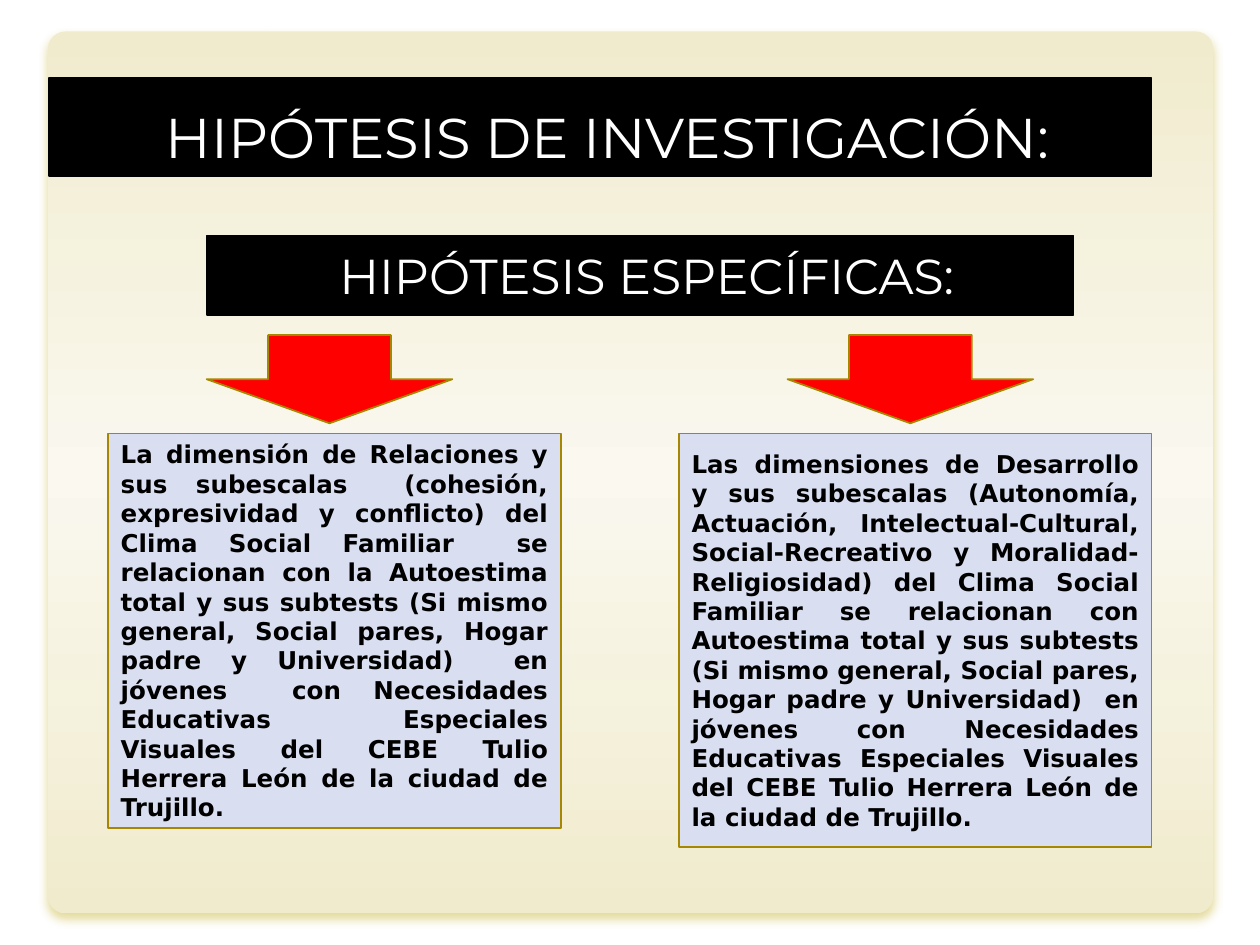
import pptx
import pptx.dml.color
import pptx.enum.shapes
import pptx.enum.text
import pptx.oxml
import pptx.util
from pptx.util import Inches

SHAPE = pptx.enum.shapes.MSO_SHAPE
ALIGN = pptx.enum.text.PP_ALIGN
ANCHOR = pptx.enum.text.MSO_ANCHOR
NAMESPACE = 'xmlns:a="http://schemas.openxmlformats.org/drawingml/2006/main"'

BLACK, WHITE, RED = "000000", "FFFFFF", "FF0000"
GOLD, PALE_BLUE = "A68701", "D9DFF0"
CREAM, LIGHT_CREAM, SHADOW = "F0EBCD", "FAF8EF", "C5AF25"

RELATIONS = (
    "La dimensión de Relaciones y sus subescalas  (cohesión, expresividad y "
    "conflicto) del Clima Social Familiar  se relacionan con la Autoestima total "
    "y sus subtests (Si mismo general, Social pares, Hogar padre y Universidad)  "
    "en jóvenes  con Necesidades Educativas Especiales Visuales del CEBE Tulio "
    "Herrera León de la ciudad de Trujillo."
)
DEVELOPMENT = (
    "Las dimensiones de Desarrollo y sus subescalas (Autonomía, Actuación, "
    "Intelectual-Cultural, Social-Recreativo y Moralidad-Religiosidad) del Clima "
    "Social Familiar se relacionan con Autoestima total y sus subtests (Si mismo "
    "general, Social pares, Hogar padre y Universidad)  en jóvenes con Necesidades "
    "Educativas Especiales Visuales del CEBE Tulio Herrera León de la ciudad de "
    "Trujillo."
)


def color(value):
    return pptx.dml.color.RGBColor.from_string(value)


def add_shape(slide, kind, box, fill, line):
    shape = slide.shapes.add_shape(kind, *map(Inches, box))
    shape.shadow.inherit = False
    shape.fill.solid()
    shape.fill.fore_color.rgb = color(fill)
    shape.line.color.rgb = color(line)
    shape.line.width = pptx.util.Pt(1)
    return shape


def add_panel(slide):
    """Rounded background with a vertical gradient and a soft shadow."""
    panel = slide.shapes.add_shape(
        SHAPE.ROUNDED_RECTANGLE, *map(Inches, (0.38, 0.25, 9.25, 7)))
    panel.adjustments[0] = 0.02
    panel.line.fill.background()
    panel.shadow.inherit = False

    stops = "".join(
        f'<a:gs pos="{percent * 1000}"><a:srgbClr val="{value}"/></a:gs>'
        for percent, value in ((0, CREAM), (50, LIGHT_CREAM), (100, CREAM)))
    gradient = pptx.oxml.parse_xml(
        f'<a:gradFill {NAMESPACE} rotWithShape="1"><a:gsLst>{stops}</a:gsLst>'
        '<a:lin ang="5400000" scaled="0"/></a:gradFill>')
    properties = panel.element.spPr
    properties.find(pptx.oxml.ns.qn("a:prstGeom")).addnext(gradient)

    shadow = pptx.oxml.parse_xml(
        f'<a:outerShdw {NAMESPACE} blurRad="63500" dist="45720" dir="5400000">'
        f'<a:srgbClr val="{SHADOW}"><a:alpha val="45000"/></a:srgbClr>'
        '</a:outerShdw>')
    properties.find(pptx.oxml.ns.qn("a:effectLst")).append(shadow)


def add_text(shape, text, size, font, text_color, alignment, anchor, bold=False):
    frame = shape.text_frame
    frame.word_wrap = True
    frame.vertical_anchor = anchor
    paragraph = frame.paragraphs[0]
    paragraph.text = text
    paragraph.alignment = alignment
    paragraph.font.size = pptx.util.Pt(size)
    paragraph.font.name = font
    paragraph.font.bold = bold
    paragraph.font.color.rgb = color(text_color)


def add_heading(slide, text, box, size, anchor):
    shape = add_shape(slide, SHAPE.RECTANGLE, box, BLACK, BLACK)
    add_text(shape, text, size, "Montserrat", WHITE, ALIGN.CENTER, anchor)


def add_hypothesis(slide, text, box, arrow_left):
    shape = add_shape(slide, SHAPE.RECTANGLE, box, PALE_BLUE, GOLD)
    add_text(shape, text, 14, "DejaVu Sans", BLACK, ALIGN.JUSTIFY,
             ANCHOR.MIDDLE, bold=True)
    add_shape(slide, SHAPE.DOWN_ARROW, (arrow_left, 2.66, 1.95, 0.7), RED, GOLD)


def main():
    presentation = pptx.Presentation()
    presentation.slide_width = Inches(10)
    presentation.slide_height = Inches(7.5)
    slide = presentation.slides.add_slide(presentation.slide_layouts[6])

    # Background
    add_panel(slide)

    # Headings
    add_heading(slide, " HIPÓTESIS DE INVESTIGACIÓN:",
                (0.39, 0.62, 8.75, 0.78), 32, ANCHOR.BOTTOM)
    add_heading(slide, " HIPÓTESIS ESPECÍFICAS:",
                (1.64, 1.87, 6.88, 0.63), 28, ANCHOR.MIDDLE)

    # Specific hypotheses, each under its arrow
    add_hypothesis(slide, RELATIONS, (0.86, 3.44, 3.59, 3.13), 1.64)
    add_hypothesis(slide, DEVELOPMENT, (5.39, 3.44, 3.75, 3.28), 6.25)

    presentation.save("out.pptx")


if __name__ == "__main__":
    main()
